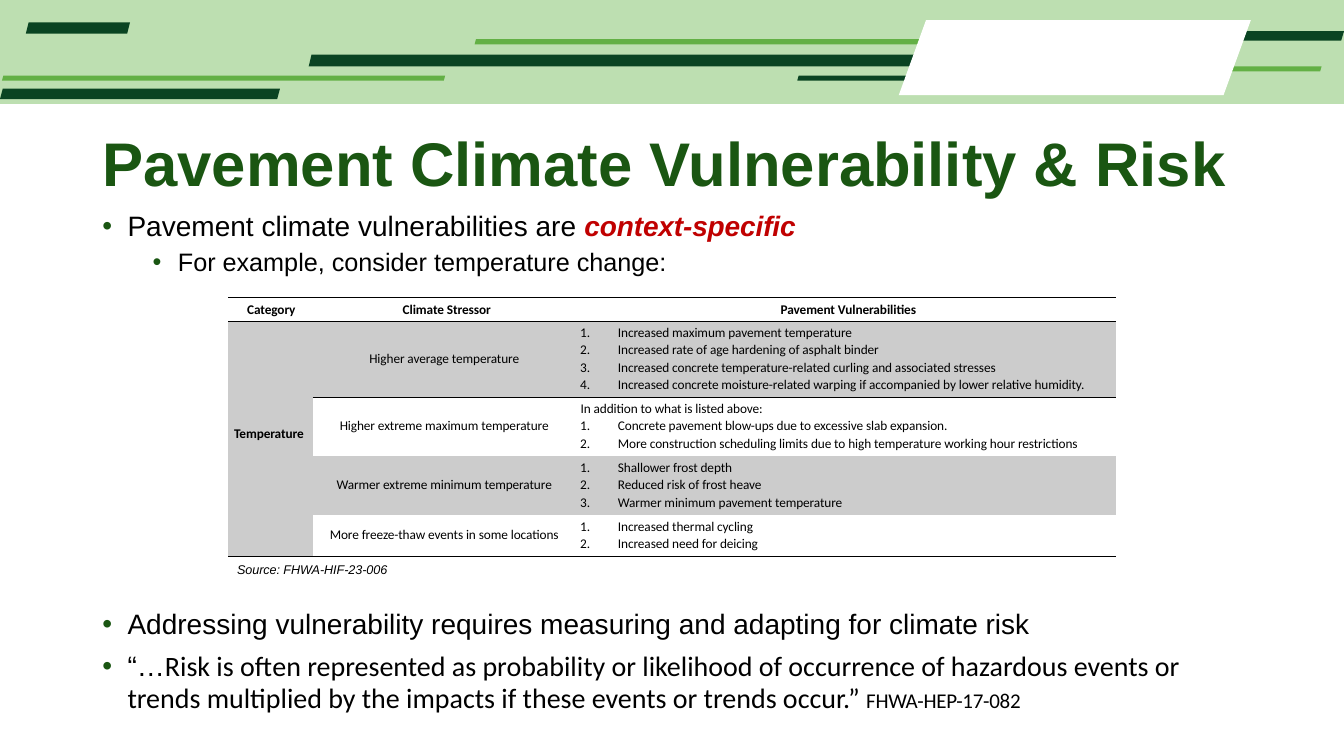
from lxml import etree
from pptx import Presentation
from pptx.dml.color import RGBColor
from pptx.enum.shapes import MSO_SHAPE
from pptx.enum.text import MSO_ANCHOR, MSO_AUTO_SIZE, PP_ALIGN
from pptx.oxml.ns import qn
from pptx.util import Pt

hex_color = RGBColor.from_string
GREEN, DARK, LIME = "1A5612", "0A4422", "63B045"
NO_STYLE_NO_GRID = "{2D5ABB26-0587-4C30-8999-92F81FD0307C}"


def add_paragraph(text_frame, text, size, font_name="Arial", before=0, bullet=None, left=0, hanging=0):
    """Fill the first empty paragraph or append one; bullet is "•", "1." or None."""
    paragraph = text_frame.paragraphs[0]
    if paragraph.runs:
        paragraph = text_frame.add_paragraph()
    properties = paragraph._p.get_or_add_pPr()
    properties.set("marL", str(Pt(left)))
    properties.set("indent", str(Pt(-hanging)))
    if bullet == "•":
        bullet_color = etree.SubElement(properties, qn("a:buClr"))
        etree.SubElement(bullet_color, qn("a:srgbClr"), val=GREEN)
        etree.SubElement(properties, qn("a:buFont"), typeface="Arial")
        etree.SubElement(properties, qn("a:buChar"), char=bullet)
    elif bullet == "1.":
        etree.SubElement(properties, qn("a:buAutoNum"), type="arabicPeriod")
    paragraph.space_before = Pt(before)
    paragraph.font.size = Pt(size)
    paragraph.font.name = font_name
    paragraph.font.color.rgb = hex_color("000000")
    run = paragraph.add_run()
    run.text = text
    if size < 10:
        run._r.get_or_add_rPr().set("spc", "-5")
    return paragraph


def add_border(cell, side):
    line = etree.SubElement(cell._tc.get_or_add_tcPr(), qn(f"a:ln{side}"), w=str(Pt(1)))
    fill = etree.SubElement(line, qn("a:solidFill"))
    etree.SubElement(fill, qn("a:srgbClr"), val="000000")


presentation = Presentation()
presentation.slide_width, presentation.slide_height = Pt(960), Pt(540)
slide = presentation.slides.add_slide(presentation.slide_layouts[3])
title, first_list, second_list = slide.placeholders

# Header band with slanted bars
band = slide.shapes.add_shape(MSO_SHAPE.RECTANGLE, 0, 0, Pt(960), Pt(74.2))
band.shadow.inherit = False
band.fill.solid()
band.fill.fore_color.rgb = hex_color("BDDFB1")
band.line.fill.background()

# Bars of one shape: left, top, right, bottom, slant
bar_groups = [
    (DARK, [(748, 22.3, 960, 29, 2)]),
    (LIME, [(339, 28, 658, 31.7, 1), (731.5, 47.5, 944, 51, 1)]),
    (DARK, [(569.5, 54, 648, 57.6, 1), (220.5, 39, 656, 47.5, 2)]),
    ("FFFFFF", [(642, 14.4, 893.5, 68, 19.5)]),
    (LIME, [(1.4, 54, 318, 57.6, 1)]),
    (DARK, [(18.5, 16, 92.9, 24, 2), (0, 63.4, 200, 70.8, 2)]),
]
for color, bars in bar_groups:
    builder = slide.shapes.build_freeform(Pt(bars[0][0]), Pt(bars[0][3]))
    for index, (left, top, right, bottom, slant) in enumerate(bars):
        if index:
            builder.move_to(Pt(left), Pt(bottom))
        corners = [(left + slant, top), (right, top), (right - slant, bottom)]
        builder.add_line_segments([(Pt(x), Pt(y)) for x, y in corners])
    shape = builder.convert_to_shape()
    shape.shadow.inherit = False
    shape.fill.solid()
    shape.fill.fore_color.rgb = hex_color(color)
    shape.line.fill.background()

# Text areas
source = slide.shapes.add_textbox(0, 0, 0, 0)
text_areas = [
    (title, 73.2, 88.5, 831, 50, 0.7),
    (first_list, 72.6, 144.7, 498, 54, 4.3),
    (second_list, 72.6, 425.5, 778, 86, 8),
    (source, 169.4, 400.3, 130, 13, 1),
]
for shape, left, top, width, height, inset in text_areas:
    shape.left, shape.top, shape.width, shape.height = Pt(left), Pt(top), Pt(width), Pt(height)
    frame = shape.text_frame
    frame.word_wrap = True
    frame.auto_size = MSO_AUTO_SIZE.NONE
    frame.vertical_anchor = MSO_ANCHOR.TOP
    frame.margin_left = frame.margin_right = frame.margin_bottom = 0
    frame.margin_top = Pt(inset)

heading = add_paragraph(title.text_frame, "Pavement Climate Vulnerability & Risk", 44)
heading.alignment = PP_ALIGN.LEFT
heading.font.bold = True
heading.font.color.rgb = hex_color(GREEN)

item = {"bullet": "•", "left": 18.5, "hanging": 18}
context = add_paragraph(first_list.text_frame, "Pavement climate vulnerabilities are ", 20, **item)
emphasis = context.add_run()
emphasis.text = "context-specific"
emphasis.font.bold = emphasis.font.italic = True
emphasis.font.color.rgb = hex_color("C00000")
example = add_paragraph(first_list.text_frame, "For example, consider temperature change:", 18,
                        before=3, bullet="•", left=54.5, hanging=18)
example.level = 1

add_paragraph(second_list.text_frame,
              "Addressing vulnerability requires measuring and adapting for climate risk", 20, **item)
quote = add_paragraph(second_list.text_frame, "“…", 20, before=7.1, **item)
quote.line_spacing = Pt(22.7)
quotation = quote.add_run()
quotation.text = ("Risk is often represented as probability or likelihood of occurrence of hazardous events or "
                  "trends multiplied by the impacts if these events or trends occur.” ")
report = quote.add_run()
report.text = "FHWA-HEP-17-082"
report.font.size = Pt(15)
quotation.font.name = report.font.name = "Calibri"
for run, spacing in [(emphasis, -10), (quotation, -4), (report, -19)]:
    run._r.get_or_add_rPr().set("spc", str(spacing))

credit = add_paragraph(source.text_frame, "Source: FHWA-HIF-23-006", 9)
credit.font.italic = True

# Vulnerability table
headers = ["Category", "Climate Stressor", "Pavement Vulnerabilities"]
stressors = [
    ("Higher average temperature", None, [
        "Increased maximum pavement temperature",
        "Increased rate of age hardening of asphalt binder",
        "Increased concrete temperature-related curling and associated stresses",
        "Increased concrete moisture-related warping if accompanied by lower relative humidity."]),
    ("Higher extreme maximum temperature", "In addition to what is listed above:", [
        "Concrete pavement blow-ups due to excessive slab expansion.",
        "More construction scheduling limits due to high temperature working hour restrictions"]),
    ("Warmer extreme minimum temperature", None, [
        "Shallower frost depth",
        "Reduced risk of frost heave",
        "Warmer minimum pavement temperature"]),
    ("More freeze-thaw events in some locations", None, [
        "Increased thermal cycling",
        "Increased need for deicing"]),
]
column_widths = [60.5, 184.3, 389.5]
row_heights = [17.4, 54.2, 42.1, 42.1, 29.6]
table = slide.shapes.add_table(5, 3, Pt(162.9), Pt(212.4), Pt(sum(column_widths)),
                               Pt(sum(row_heights))).table
table.first_row = table.horz_banding = False
table._tbl.tblPr.find(qn("a:tableStyleId")).text = NO_STYLE_NO_GRID
for column, width in zip(table.columns, column_widths):
    column.width = Pt(width)
for row, height in zip(table.rows, row_heights):
    row.height = Pt(height)

for row_index, row in enumerate(table.rows):
    for column_index, cell in enumerate(row.cells):
        cell.margin_left = cell.margin_right = cell.margin_top = cell.margin_bottom = 0
        cell.vertical_anchor = MSO_ANCHOR.MIDDLE
        if row_index < 2:
            add_border(cell, "T")
        if row_index in (0, 4) or (row_index == 1 and column_index == 0):
            add_border(cell, "B")
        if row_index in (1, 3) or (row_index > 0 and column_index == 0):
            cell.fill.solid()
            cell.fill.fore_color.rgb = hex_color("CCCCCC")
        else:
            cell.fill.background()

for column_index, header in enumerate(headers):
    paragraph = add_paragraph(table.cell(0, column_index).text_frame, header, 9.5, "Calibri",
                              left=7.2 if column_index else 1.4)
    paragraph.alignment = PP_ALIGN.CENTER
    paragraph.font.bold = True

category = table.cell(1, 0)
category.merge(table.cell(4, 0))
category.margin_bottom = Pt(7)
add_paragraph(category.text_frame, "Temperature", 9.5, "Calibri", left=4.3).font.bold = True

for row_index, (stressor, introduction, vulnerabilities) in enumerate(stressors, 1):
    name = add_paragraph(table.cell(row_index, 1).text_frame, stressor, 9.5, "Calibri", left=3.6)
    name.alignment = PP_ALIGN.CENTER
    table.cell(row_index, 1).margin_bottom = Pt(1.4)
    cell = table.cell(row_index, 2)
    cell.vertical_anchor = MSO_ANCHOR.TOP
    cell.margin_top = Pt(2.2)
    if introduction:
        add_paragraph(cell.text_frame, introduction, 9.5, "Calibri", left=7)
    for index, vulnerability in enumerate(vulnerabilities):
        add_paragraph(cell.text_frame, vulnerability, 9.5, "Calibri",
                      before=1 if index or introduction else 0, bullet="1.", left=33.7, hanging=27)

presentation.save("out.pptx")
